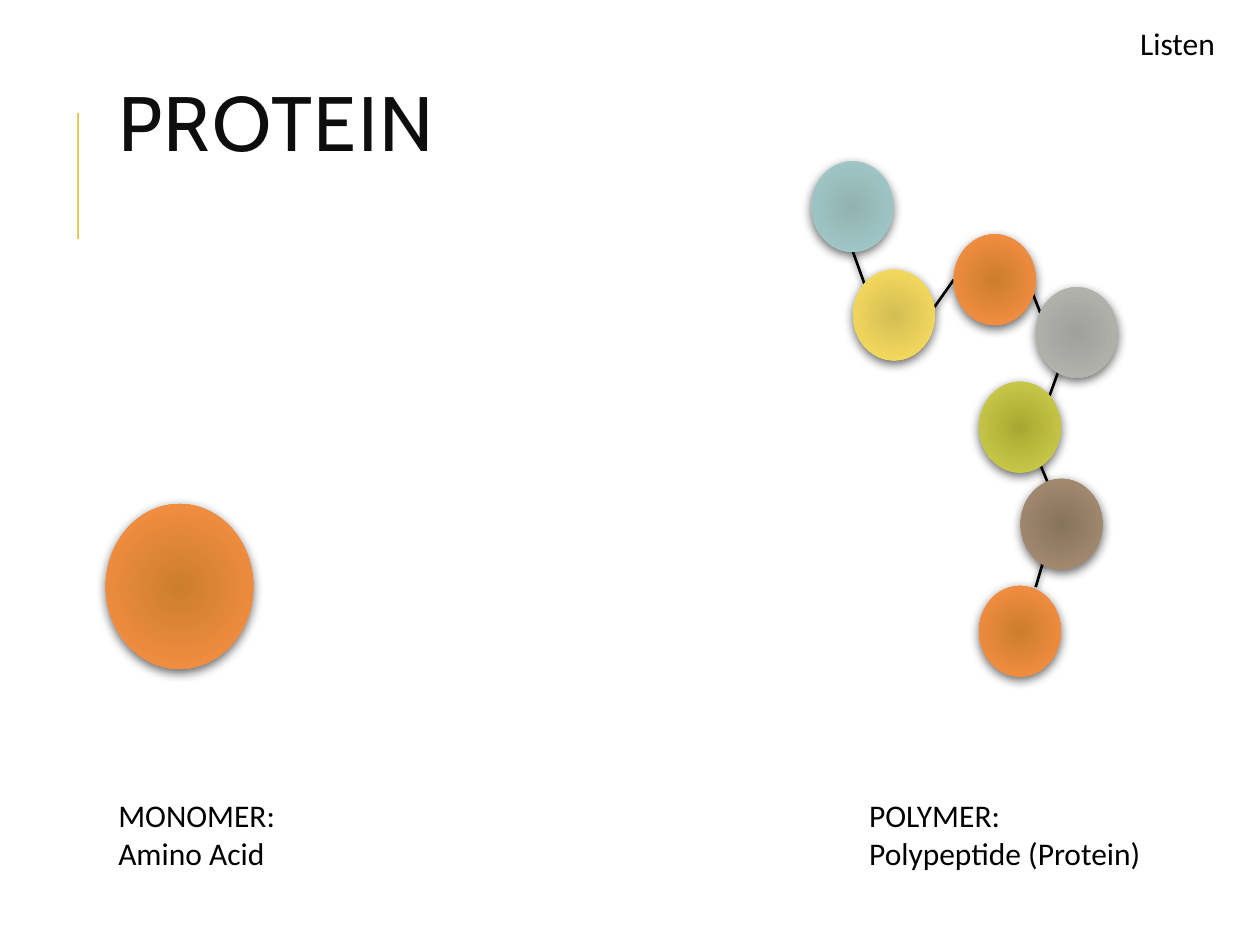
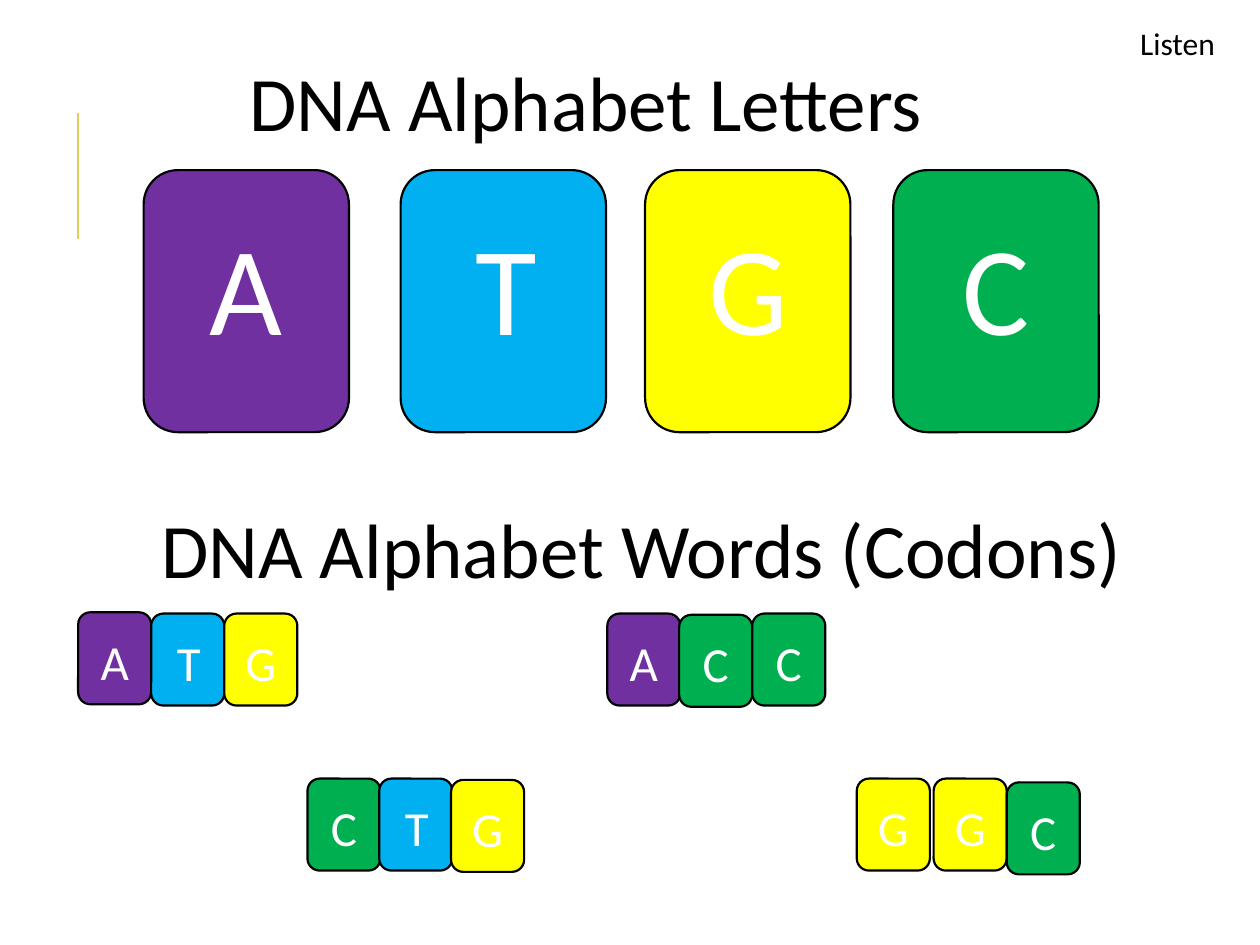
from lxml.etree import SubElement
from pptx import Presentation
from pptx.dml.color import RGBColor
from pptx.enum.shapes import MSO_CONNECTOR as Connector, MSO_SHAPE as Shape
from pptx.enum.text import MSO_ANCHOR as Anchor, MSO_AUTO_SIZE as AutoSize, PP_ALIGN as Align
from pptx.oxml.ns import qn
from pptx.util import Inches, Pt

COLORS = {
    "black": "000000", "white": "FFFFFF", "title": "0D0D0D", "accent": "E3CC5A",
    "A": "7030A0", "T": "00B0F0", "G": "FFFF00", "C": "00B050",
}
# Centre and rim colours of each amino acid
AMINO_COLORS = {
    "orange": ("CC7D2E", "FD9347"), "yellow": ("D4BE54", "FFE261"),
    "blue": ("92B2B1", "A3CECC"), "grey": ("A0A19D", "B7B8B2"),
    "green": ("A7A831", "D2D351"), "brown": ("88745A", "AA9175"),
}
# Card size, letter size, letter offset, letter box height and widths
BIG_CARD = {"size": (1.63, 2.08), "points": 72, "drop": 0.26, "height": 1.31,
            "widths": {"A": 0.81, "T": 0.64, "G": 0.98, "C": 0.81}}
SMALL_CARD = {"size": (0.58, 0.73), "points": 28, "drop": 0.1, "height": 0.57,
              "widths": {"A": 0.44, "T": 0.37, "G": 0.51, "C": 0.44}}


def rgb(name):
    return RGBColor.from_string(COLORS.get(name, name))


def inches(*lengths):
    return [Inches(length) for length in lengths]


def write(frame, text, size=18, font="Calibri", color="black", align=Align.LEFT,
          line_spacing=None, tracking=None):
    """Write each line of the text as a paragraph."""
    for number, line in enumerate(text.split("\n")):
        paragraph = frame.add_paragraph() if number else frame.paragraphs[0]
        paragraph.alignment = align
        paragraph.line_spacing = line_spacing
        run = paragraph.add_run()
        run.text = line
        run.font.size, run.font.name = Pt(size), font
        run.font.color.rgb = rgb(color)
        if tracking:
            run._r.get_or_add_rPr().set("spc", str(int(tracking * 100)))


def set_shadow(item, opacity=0, blur=0, distance=0):
    """Replace the theme effects, with a shadow below if it has opacity."""
    properties = item._element.find(qn("p:spPr"))
    effects = SubElement(properties, qn("a:effectLst"))
    if opacity:
        shadow = SubElement(effects, qn("a:outerShdw"), blurRad=str(Pt(blur)),
                            dist=str(Pt(distance)), dir="5400000", rotWithShape="0")
        tint = SubElement(shadow, qn("a:srgbClr"), val=COLORS["black"])
        SubElement(tint, qn("a:alpha"), val=str(opacity * 1000))


class Deck:
    def __init__(self):
        self.presentation = Presentation()
        self.presentation.slide_width, self.presentation.slide_height = inches(10, 7.5)

    def new_slide(self):
        """Start a slide with the shared side rule and the Listen label."""
        self.slide = self.presentation.slides.add_slide(self.presentation.slide_layouts[6])
        self.shapes = self.slide.shapes
        self.line((0.62, 1.9), (0.62, 0.9), color="accent")
        self.text("Listen", 8.95, 0.14, 0.95, 0.4)

    def start_group(self):
        self.shapes = self.slide.shapes.add_group_shape().shapes

    def end_group(self):
        self.shapes = self.slide.shapes

    def text(self, text, left, top, width, height, wrap=True, anchor=Anchor.TOP,
             autosize=AutoSize.SHAPE_TO_FIT_TEXT, **style):
        box = self.shapes.add_textbox(*inches(left, top, width, height))
        frame = box.text_frame
        frame.word_wrap, frame.auto_size = wrap, autosize
        frame.vertical_anchor = anchor
        write(frame, text, **style)

    def line(self, start, end, color="black", **shadow):
        line = self.shapes.add_connector(Connector.STRAIGHT, *inches(*start, *end))
        line.line.color.rgb = rgb(color)
        line.line.width = Pt(1.5)
        set_shadow(line, **shadow)

    def amino_acid(self, name, left, top, width=0.65, height=0.72):
        ball = self.shapes.add_shape(Shape.OVAL, *inches(left, top, width, height))
        ball.fill.gradient()
        for stop, shade in zip(ball.fill.gradient_stops, AMINO_COLORS[name]):
            stop.color.rgb = rgb(shade)
        # Turn the linear gradient into a circular one
        gradient = ball._element.spPr.find(qn("a:gradFill"))
        gradient.remove(gradient.find(qn("a:lin")))
        circle = SubElement(gradient, qn("a:path"), path="circle")
        SubElement(circle, qn("a:fillToRect"), l="100000", t="100000", r="100000", b="100000")
        ball.line.fill.background()
        set_shadow(ball, opacity=60, blur=6, distance=2)

    def card(self, letter, left, top, kind):
        width, height = kind["size"]
        card = self.shapes.add_shape(Shape.ROUNDED_RECTANGLE, *inches(left, top, width, height))
        card.fill.solid()
        card.fill.fore_color.rgb = rgb(letter)
        card.line.color.rgb = rgb("black")
        card.line.width = Pt(1.25)
        card.shadow.inherit = False
        letter_width = kind["widths"][letter]
        self.text(letter, left + (width - letter_width) / 2, top + kind["drop"],
                  letter_width, kind["height"], wrap=False, size=kind["points"],
                  color="white", align=Align.CENTER)


def build_protein(deck):
    deck.new_slide()
    deck.text("PROTEIN", 0.84, 0.21, 7.97, 1.64, anchor=Anchor.MIDDLE, autosize=AutoSize.NONE,
              size=44, font="Cabin", color="title", line_spacing=0.8, tracking=1)

    # Monomer
    deck.amino_acid("orange", 0.84, 4, 1.17, 1.31)
    deck.text("MONOMER:\nAmino Acid", 0.84, 6.27, 2.35, 0.71)

    # Polymer: bonds lie under the chain of amino acids
    bonds = [
        ((6.77, 2), (6.86, 2.25)), ((7.4, 2.46), (7.57, 2.22)), ((8.16, 2.24), (8.26, 2.49)),
        ((8.41, 2.92), (8.33, 3.14)), ((8.22, 3.6), (8.32, 3.84)), ((8.22, 4.66), (8.32, 4.32)),
    ]
    chain = [
        ("blue", 6.44, 1.28), ("yellow", 6.77, 2.14), ("orange", 7.57, 1.86),
        ("grey", 8.22, 2.28), ("green", 7.77, 3.03), ("brown", 8.1, 3.8),
        ("orange", 7.77, 4.65),
    ]
    deck.start_group()
    for start, end in bonds:
        deck.line(start, end, opacity=50, blur=4, distance=1)
    for name, left, top in chain:
        deck.amino_acid(name, left, top)
    deck.end_group()
    deck.text("POLYMER:\nPolypeptide (Protein)", 6.8, 6.27, 2.96, 0.71)


def build_dna_alphabet(deck):
    deck.new_slide()

    # Letters
    deck.text("DNA Alphabet Letters", 1.88, 0.38, 6.48, 0.84, size=44)
    for letter, left in zip("ATGC", (1.14, 3.18, 5.12, 7.09)):
        deck.start_group()
        deck.card(letter, left, 1.35, BIG_CARD)
        deck.end_group()

    # Codons: letters, left edges, top edges
    deck.text("DNA Alphabet Words (Codons)", 1.18, 3.93, 7.88, 0.84, size=44)
    codons = [
        ("ATG", (0.62, 1.2, 1.78), (4.86, 4.87, 4.87)),
        ("CTG", (2.44, 3.01, 3.58), (6.18, 6.18, 6.19)),
        ("ACC", (4.82, 5.39, 5.97), (4.87, 4.88, 4.87)),
        ("GGC", (6.8, 7.41, 7.99), (6.18, 6.18, 6.21)),
    ]
    for codon, lefts, tops in codons:
        deck.start_group()
        for letter, left, top in zip(codon, lefts, tops):
            deck.card(letter, left, top, SMALL_CARD)
        deck.end_group()


def main():
    deck = Deck()
    build_protein(deck)
    build_dna_alphabet(deck)
    deck.presentation.save("out.pptx")


if __name__ == "__main__":
    main()
